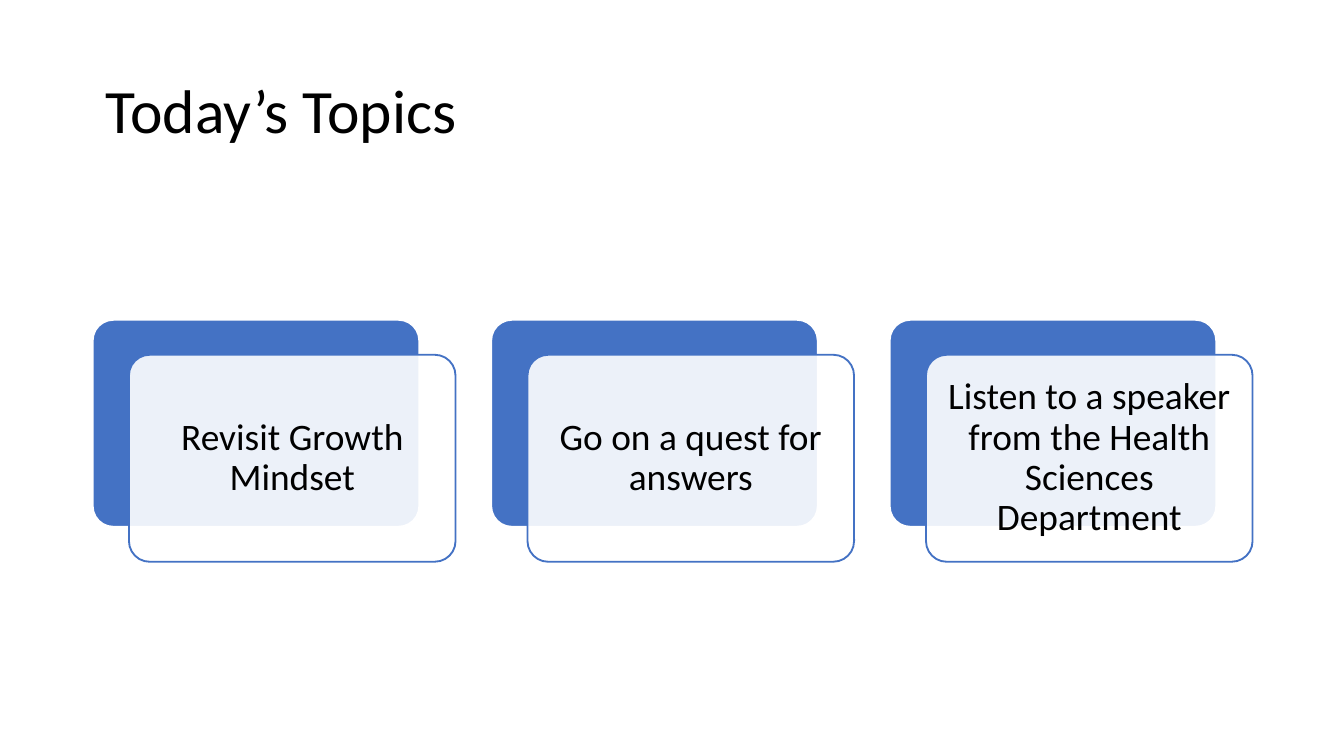
from lxml import etree
from pptx import Presentation
from pptx.dml.color import RGBColor
from pptx.enum.shapes import MSO_SHAPE as Shape
from pptx.enum.text import MSO_ANCHOR as Anchor, PP_ALIGN as Align
from pptx.oxml.ns import qn
from pptx.util import Inches, Pt

TITLE = "Today’s Topics"
TOPICS = [
    "Revisit Growth Mindset",
    "Go on a quest for answers",
    "Listen to a speaker from the Health Sciences Department",
]
BLUE, WHITE, BLACK = "4472C4", "FFFFFF", "000000"
LEFT, LAST, TOP, WIDE, HIGH = 0.69, 6.62, 2.38, 2.43, 1.54
STEP = (LAST - LEFT) / (len(TOPICS) - 1)
RIGHT, DOWN, INSET = 0.27, 0.26, 0.04


def color(code):
    return RGBColor.from_string(code)


def add_card(slide, x, y, fill, edge, alpha=None):
    card = slide.shapes.add_shape(
        Shape.ROUNDED_RECTANGLE, Inches(x), Inches(y), Inches(WIDE), Inches(HIGH))
    card.adjustments[0] = 0.1
    card.shadow.inherit = False
    card.fill.solid()
    card.fill.fore_color.rgb = color(fill)
    card.line.color.rgb = color(edge)
    card.line.width = Pt(1)
    if alpha:
        tint = card.element.spPr.find(qn("a:solidFill"))[0]
        etree.SubElement(tint, qn("a:alpha")).set("val", str(alpha * 1000))


def add_text(slide, text, x, y, w, h, size, align, pad):
    box = slide.shapes.add_textbox(Inches(x), Inches(y), Inches(w), Inches(h))
    frame = box.text_frame
    frame.word_wrap = True
    frame.vertical_anchor = Anchor.MIDDLE
    frame.margin_left = frame.margin_right = Inches(pad[0])
    frame.margin_top = frame.margin_bottom = Inches(pad[1])
    para = frame.paragraphs[0]
    para.alignment = align
    para.line_spacing = 0.9
    run = para.add_run()
    run.text = text
    run.font.name = "Calibri"
    run.font.size = Pt(size)
    run.font.color.rgb = color(BLACK)


def main():
    """Build the topics slide and save it."""
    deck = Presentation()
    deck.slide_width = Inches(10)
    deck.slide_height = Inches(10 * 9 / 16)
    slide = deck.slides.add_slide(deck.slide_layouts[6])
    add_text(slide, TITLE, LEFT, 0.3, 8.62, 1.09, 33, Align.LEFT, (0.1, 0.05))
    for i, topic in enumerate(TOPICS):
        x = LEFT + i * STEP
        add_card(slide, x, TOP, BLUE, WHITE)
        add_card(slide, x + RIGHT, TOP + DOWN, WHITE, BLUE, 90)
        add_text(slide, topic, x + RIGHT + INSET, TOP + DOWN + INSET,
                 WIDE - 2 * INSET, HIGH - 2 * INSET, 20, Align.CENTER, (0.08, 0.08))
    deck.save("out.pptx")


if __name__ == "__main__":
    main()
